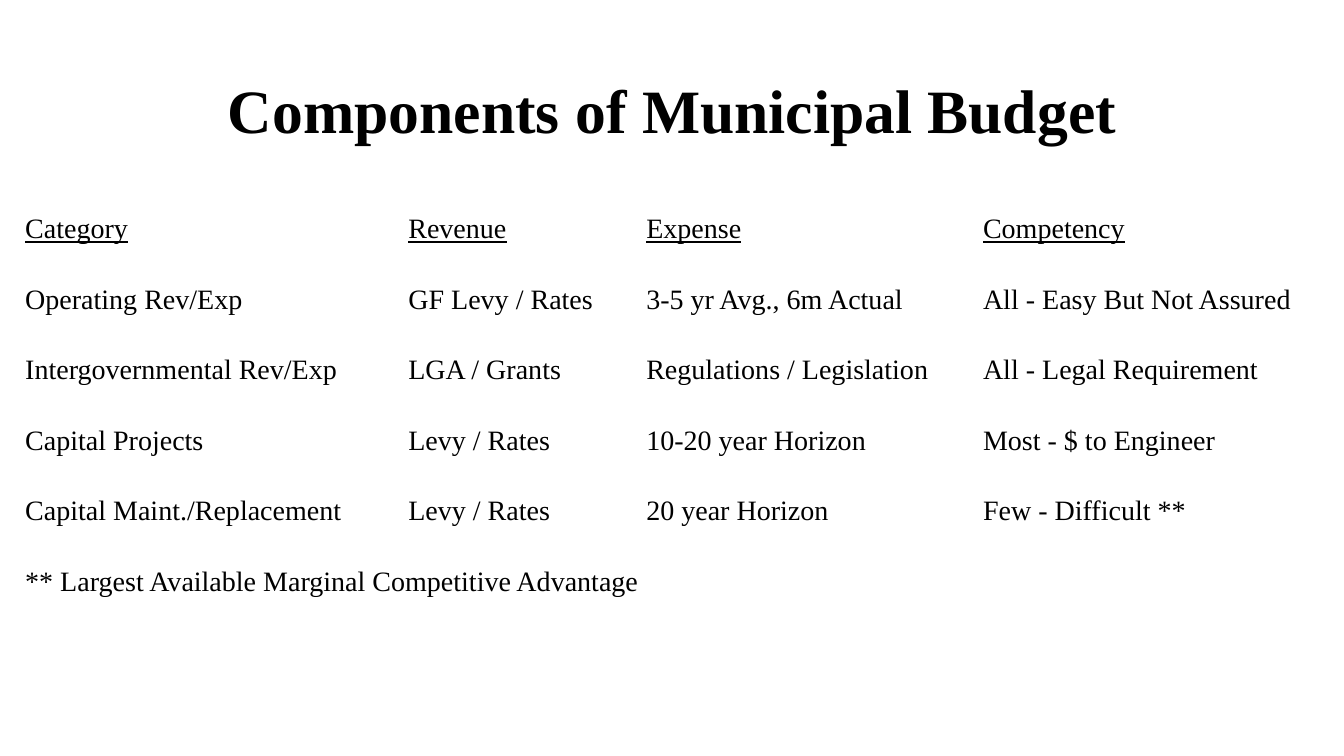
from pptx import Presentation
from pptx.dml.color import RGBColor
from pptx.enum.text import MSO_ANCHOR, PP_ALIGN
from pptx.util import Inches, Pt

COLORS = {"text": "000000", "background": "FFFFFF"}
FONT = "Times New Roman"

COLUMN_WIDTHS = [3.8, 2.36, 3.34, 3.59]
ROW_HEIGHT = 0.7
BUDGET_ROWS = [
    ["Category", "Revenue", "Expense", "Competency"],
    ["Operating Rev/Exp", "GF Levy / Rates", "3-5 yr Avg., 6m Actual", "All - Easy But Not Assured"],
    ["Intergovernmental Rev/Exp", "LGA / Grants", "Regulations / Legislation", "All - Legal Requirement"],
    ["Capital Projects", "Levy / Rates", "10-20 year Horizon", "Most - $ to Engineer"],
    ["Capital Maint./Replacement", "Levy / Rates", "20 year Horizon", "Few - Difficult **"],
    ["** Largest Available Marginal Competitive Advantage"],
]


def format_text(paragraph, size, bold=False, underline=False):
    for run in paragraph.runs:
        run.font.name = FONT
        run.font.size = Pt(size)
        run.font.bold = bold
        run.font.underline = underline
        run.font.color.rgb = RGBColor.from_string(COLORS["text"])


presentation = Presentation()
presentation.slide_width = Inches(13.33)
presentation.slide_height = Inches(7.5)
slide = presentation.slides.add_slide(presentation.slide_layouts[6])
slide.background.fill.solid()
slide.background.fill.fore_color.rgb = RGBColor.from_string(COLORS["background"])

title = slide.shapes.add_textbox(Inches(0.92), Inches(0.4), Inches(11.5), Inches(1.45)).text_frame
title.word_wrap = True
title.vertical_anchor = MSO_ANCHOR.MIDDLE
title.text = "Components of Municipal Budget"
title.paragraphs[0].alignment = PP_ALIGN.CENTER
title.paragraphs[0].line_spacing = 0.9
format_text(title.paragraphs[0], 44, bold=True)

budget = slide.shapes.add_table(
    len(BUDGET_ROWS), len(COLUMN_WIDTHS), Inches(0.24), Inches(1.73),
    Inches(sum(COLUMN_WIDTHS)), Inches(ROW_HEIGHT * len(BUDGET_ROWS)),
).table
budget.first_row = False
budget.horz_banding = False
for column, width in zip(budget.columns, COLUMN_WIDTHS):
    column.width = Inches(width)

for cell in budget.iter_cells():
    cell.fill.background()
    cell.vertical_anchor = MSO_ANCHOR.BOTTOM
    cell.margin_left = cell.margin_top = cell.margin_right = Inches(0.01)
    cell.margin_bottom = 0

footnote_row = len(BUDGET_ROWS) - 1
budget.cell(footnote_row, 0).merge(budget.cell(footnote_row, len(COLUMN_WIDTHS) - 1))

for row_index, entries in enumerate(BUDGET_ROWS):
    for column_index, entry in enumerate(entries):
        cell_text = budget.cell(row_index, column_index).text_frame
        cell_text.text = entry
        format_text(cell_text.paragraphs[0], 20, underline=row_index == 0)

presentation.save("out.pptx")
